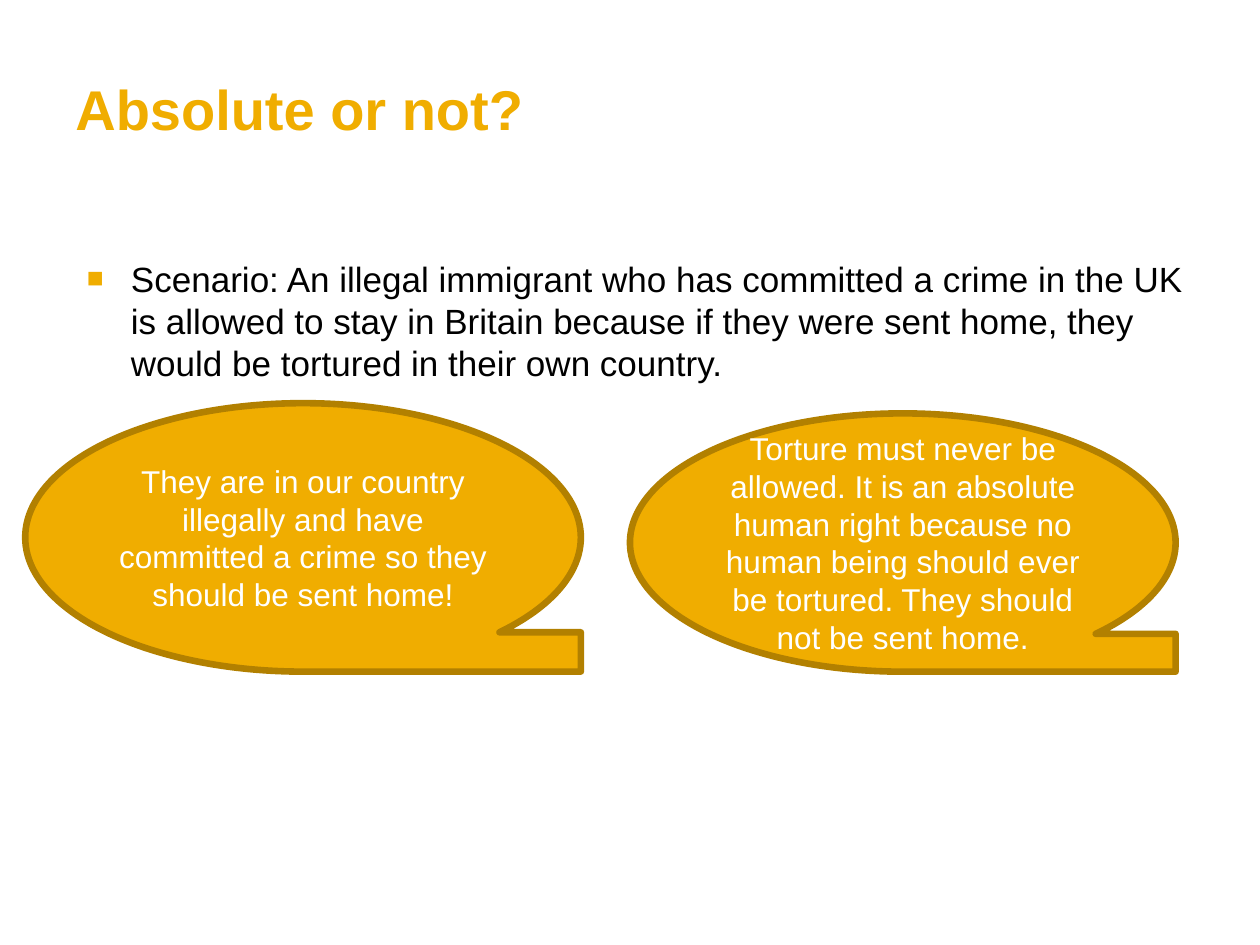
"""Build the "Absolute or not?" slide with a scenario and two opposing views."""
from lxml.etree import SubElement
from pptx import Presentation
from pptx.dml.color import RGBColor
from pptx.enum.shapes import MSO_SHAPE
from pptx.enum.text import MSO_ANCHOR as ANCHOR, PP_ALIGN as ALIGN
from pptx.oxml.ns import qn
from pptx.util import Pt

GOLD, BROWN, BLACK, WHITE = "F0AD00", "B28000", "000000", "FFFFFF"


def rgb(value):
    return RGBColor.from_string(value)


def write(s, text, size, color, anchor, margins, bold=False):
    tf = s.text_frame
    tf.word_wrap = True
    tf.vertical_anchor = anchor
    tf.margin_left, tf.margin_top, tf.margin_right, tf.margin_bottom = map(Pt, margins)
    tf.text = text
    p = tf.paragraphs[0]
    font = p.runs[0].font
    font.name, font.size, font.bold = "Arial", Pt(size), bold
    font.color.rgb = rgb(color)
    return p


prs = Presentation()
prs.slide_width, prs.slide_height = Pt(720), Pt(540)
slide = prs.slides.add_slide(prs.slide_layouts[6])

title = slide.shapes.add_textbox(Pt(36), Pt(12.24), Pt(648), Pt(98.64))
write(title, "Absolute or not?", 32, GOLD, ANCHOR.MIDDLE, (7.2, 3.6, 3.6, 3.6), True)

body = slide.shapes.add_textbox(Pt(36), Pt(139.68), Pt(648), Pt(364.32))
scenario = (
    "Scenario: An illegal immigrant who has committed a crime in the UK is allowed "
    "to stay in Britain because if they were sent home, they would be tortured in "
    "their own country."
)
p = write(body, scenario, 20, BLACK, ANCHOR.TOP, (4.32, 7.2, 7.2, 3.6))
pPr = p._p.get_or_add_pPr()
pPr.set("marL", str(Pt(34.56)))
pPr.set("indent", str(-Pt(25.2)))
SubElement(SubElement(pPr, qn("a:buClr")), qn("a:srgbClr"), val=GOLD)
SubElement(pPr, qn("a:buSzPct"), val="80000")
SubElement(pPr, qn("a:buFont"), typeface="Arial")
SubElement(pPr, qn("a:buChar"), char="■")

views = [
    (14.4, 230.4, 317.5, 153.4,
     "They are in our country illegally and have committed a crime so they should "
     "be sent home!"),
    (360, 236.2, 311.8, 147.6,
     "Torture must never be allowed. It is an absolute human right because no human "
     "being should ever be tortured. They should not be sent home."),
]
for left, top, width, height, text in views:
    s = slide.shapes.add_shape(
        MSO_SHAPE.FLOWCHART_SEQUENTIAL_ACCESS_STORAGE,
        Pt(left), Pt(top), Pt(width), Pt(height))
    s.shadow.inherit = False
    s.fill.solid()
    s.fill.fore_color.rgb = rgb(GOLD)
    s.line.color.rgb = rgb(BROWN)
    s.line.width = Pt(3.78)
    p = write(s, text, 18, WHITE, ANCHOR.MIDDLE, (7.2, 3.6, 7.2, 3.6))
    p.alignment = ALIGN.CENTER

prs.save("out.pptx")
